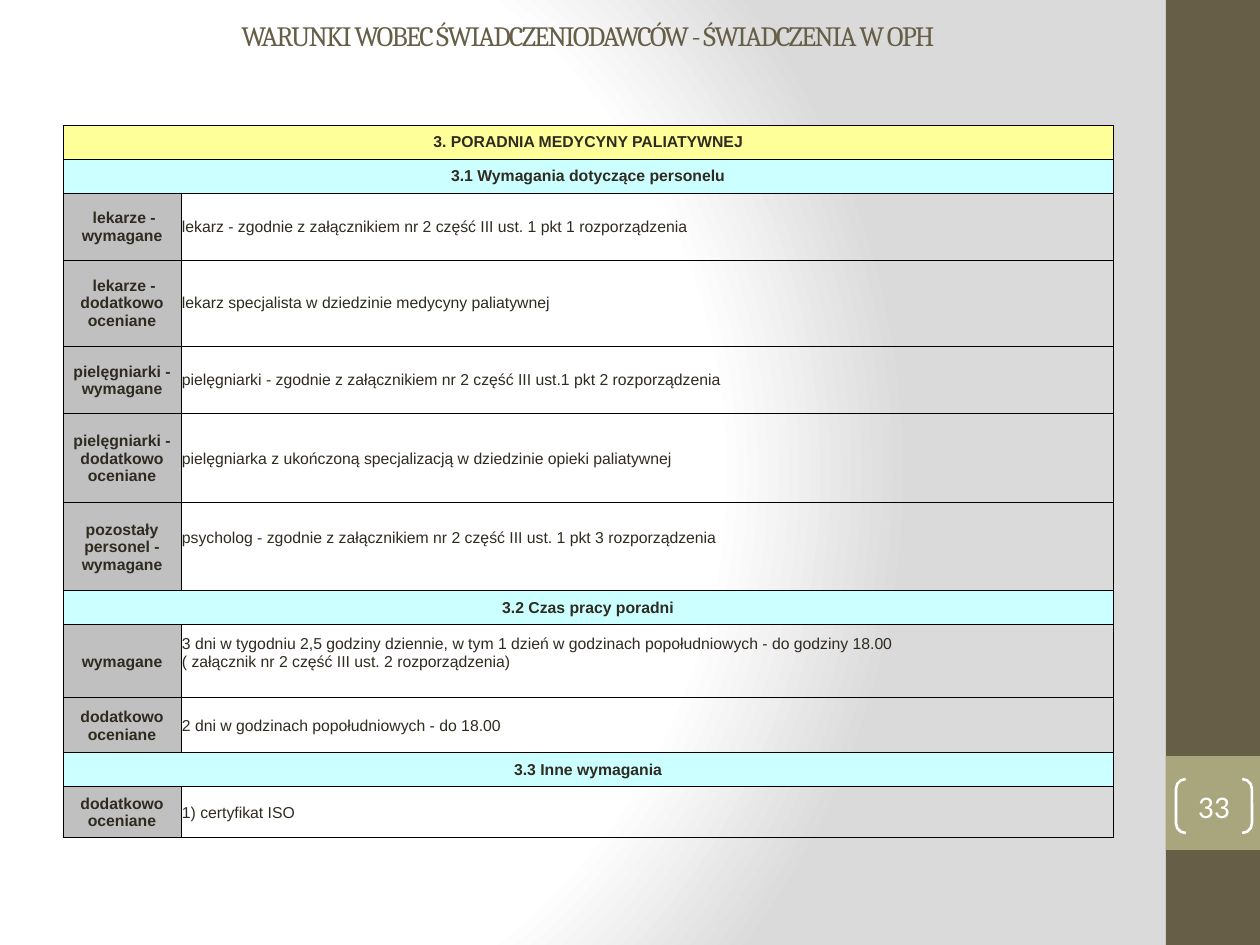
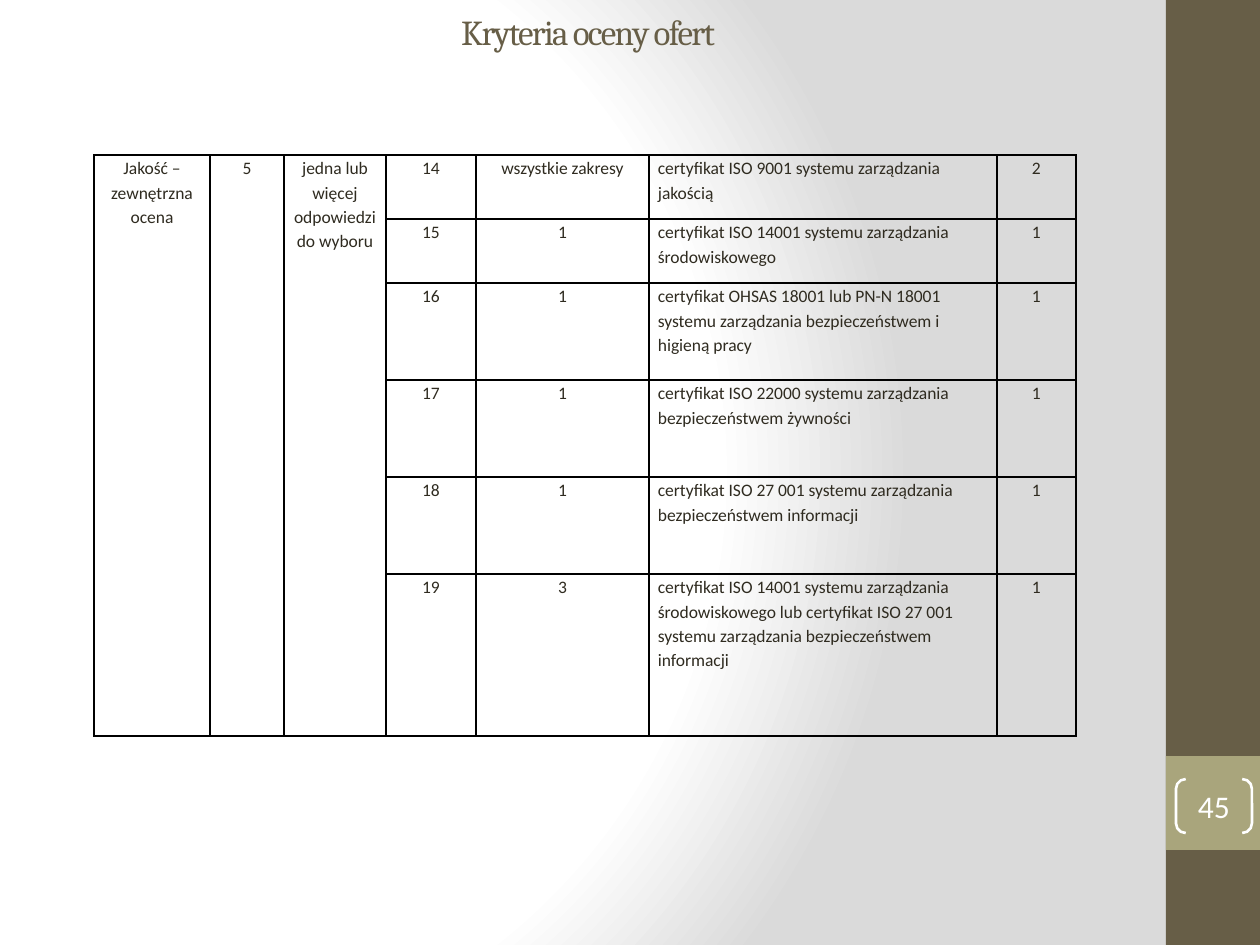
import pptx
import pptx.dml.color
import pptx.enum.shapes
import pptx.enum.text
import pptx.oxml
import pptx.oxml.ns
import pptx.util

PX = 914400 / 126
COLOURS = {
    "olive": "675E47", "sage": "A9A57C", "white": "FFFFFF", "mist": "DADADA",
    "ink": "2F2B20", "black": "000000", "yellow": "FFFF99", "cyan": "CCFFFF",
    "grey": "C0C0C0",
}
SHAPES = pptx.enum.shapes.MSO_SHAPE
CENTER = pptx.enum.text.PP_ALIGN.CENTER
LEFT = pptx.enum.text.PP_ALIGN.LEFT
TOP = pptx.enum.text.MSO_ANCHOR.TOP
MIDDLE = pptx.enum.text.MSO_ANCHOR.MIDDLE
NAMESPACE = pptx.oxml.ns.nsdecls("a")


def emu(pixels):
    return pptx.util.Emu(round(pixels * PX))


def rgb(name):
    return pptx.dml.color.RGBColor.from_string(COLOURS[name])


class Composer:
    """Holds the shared style and the slide being built."""

    def __init__(self):
        self.deck = pptx.Presentation()
        self.deck.slide_width = emu(1260)
        self.deck.slide_height = emu(945)
        self.page = None

    def new_page(self, title, title_size, title_height, number, title_lift=6):
        self.page = self.deck.slides.add_slide(self.deck.slide_layouts[6])
        self.background()
        # Side band with the page number
        self.block(1166, 0, 94, 945, "olive")
        self.block(1166, 756, 94, 94, "sage")
        self.number(number)
        self.title(title, title_size, title_height, title_lift)

    def background(self):
        fill = self.page.background.fill
        fill.solid()
        stops = "".join(
            f'<a:gs pos="{position * 1000}"><a:srgbClr val="{COLOURS[name]}"/></a:gs>'
            for position, name in ((0, "white"), (75, "white"), (100, "mist")))
        gradient = pptx.oxml.parse_xml(
            f'<a:gradFill {NAMESPACE} rotWithShape="1"><a:gsLst>{stops}</a:gsLst>'
            '<a:path path="circle"><a:fillToRect l="20000" t="50000" r="100000" b="50000"/>'
            '</a:path></a:gradFill>')
        solid = self.page.element.find(".//" + pptx.oxml.ns.qn("a:solidFill"))
        solid.getparent().replace(solid, gradient)

    def block(self, left, top, width, height, colour, kind=SHAPES.RECTANGLE):
        shape = self.page.shapes.add_shape(
            kind, emu(left), emu(top), emu(width), emu(height))
        shape.shadow.inherit = False
        shape.line.fill.background()
        if colour:
            shape.fill.solid()
            shape.fill.fore_color.rgb = rgb(colour)
        else:
            shape.fill.background()
        return shape

    def number(self, number):
        bracket = self.block(1176, 779, 76, 54, None, SHAPES.DOUBLE_BRACKET)
        bracket.adjustments[0] = 0.18
        bracket.line.color.rgb = rgb("white")
        bracket.line.width = pptx.util.Pt(1.5)
        frame = bracket.text_frame
        self.margins(frame, 0, 0, 0, 0)
        frame.vertical_anchor = MIDDLE
        self.add_text(frame, str(number), 18, "Calibri", "white")

    def title(self, text, size, height, lift):
        box = self.page.shapes.add_textbox(emu(63), emu(16), emu(1050), emu(height))
        frame = box.text_frame
        frame.word_wrap = True
        frame.vertical_anchor = MIDDLE
        self.margins(frame, 12, 6 if lift == 6 else 0, 12, lift)
        for span in self.add_text(frame, text, size, "Cambria", "olive"):
            span.font._element.set("spc", "-100")

    def margins(self, target, left, top, right, bottom):
        target.margin_left, target.margin_top = emu(left), emu(top)
        target.margin_right, target.margin_bottom = emu(right), emu(bottom)

    def add_text(self, frame, text, size, font, colour, bold=False, align=CENTER, spacing=None):
        para = frame.paragraphs[0]
        para.alignment = align
        if spacing:
            para.line_spacing = spacing
        spans = []
        for index, line in enumerate(text.split("\n")):
            if index:
                para.add_line_break()
            span = para.add_run()
            span.text = line
            span.font.size = pptx.util.Pt(size)
            span.font.name = font
            span.font.bold = bold
            span.font.color.rgb = rgb(colour)
            spans.append(span)
        return spans

    def table(self, left, top, columns, rows, border):
        table = self.page.shapes.add_table(
            len(rows), len(columns), emu(left), emu(top),
            emu(sum(columns)), emu(sum(rows))).table
        table.first_row = table.horz_banding = False
        for column, width in zip(table.columns, columns):
            column.width = emu(width)
        for row, height in zip(table.rows, rows):
            row.height = emu(height)
        for cell in table.iter_cells():
            self.borders(cell, border)
            cell.fill.background()
        return table

    def borders(self, cell, points):
        properties = cell._tc.get_or_add_tcPr()
        for side in "LRTB":
            properties.append(pptx.oxml.parse_xml(
                f'<a:ln{side} {NAMESPACE} w="{round(points * 12700)}"><a:solidFill>'
                f'<a:srgbClr val="{COLOURS["black"]}"/></a:solidFill></a:ln{side}>'))

    def cell(self, cell, text, size, font, margins, anchor, fill=None, **style):
        self.margins(cell, *margins)
        cell.vertical_anchor = anchor
        if fill:
            cell.fill.solid()
            cell.fill.fore_color.rgb = rgb(fill)
        self.add_text(cell.text_frame, text, size, font, "ink", **style)


# Each row: height, heading or label, requirement, space kept below the requirement
CLINIC_ROWS = [
    (34, "3. PORADNIA MEDYCYNY PALIATYWNEJ", None, 0),
    (34, "3.1 Wymagania dotyczące personelu", None, 0),
    (67, " lekarze - wymagane",
     "lekarz - zgodnie z załącznikiem nr 2 część III ust. 1 pkt 1 rozporządzenia", 0),
    (86, " lekarze - dodatkowo oceniane",
     "lekarz specjalista w dziedzinie medycyny paliatywnej", 0),
    (68, "pielęgniarki - wymagane",
     "pielęgniarki - zgodnie z załącznikiem nr 2 część III ust.1 pkt 2 rozporządzenia", 0),
    (89, "pielęgniarki - dodatkowo oceniane",
     "pielęgniarka z ukończoną specjalizacją w dziedzinie opieki paliatywnej", 0),
    (88, "pozostały personel - wymagane",
     "psycholog - zgodnie z załącznikiem nr 2 część III ust. 1 pkt 3 rozporządzenia", 18),
    (34, "3.2 Czas pracy poradni", None, 0),
    (73, "wymagane",
     "3 dni w tygodniu 2,5 godziny dziennie, w tym 1 dzień w godzinach popołudniowych"
     " - do godziny 18.00\n( załącznik nr 2 część III ust. 2 rozporządzenia)", 18),
    (55, "dodatkowo oceniane", "2 dni w godzinach popołudniowych - do 18.00", 0),
    (34, "3.3 Inne wymagania", None, 0),
    (51, "dodatkowo oceniane", "1) certyfikat ISO", 0),
]

QUALITY_GROUP = ("Jakość – zewnętrzna ocena", "5", "jedna lub więcej odpowiedzi do wyboru")

# Each row: height, item number, scope, certificate, points
CERTIFICATE_ROWS = [
    (64, "14", "wszystkie zakresy", "certyfikat ISO 9001 systemu zarządzania jakością", "2"),
    (64, "15", "1", "certyfikat ISO 14001 systemu zarządzania środowiskowego", "1"),
    (97, "16", "1", "certyfikat OHSAS 18001 lub PN-N 18001 systemu zarządzania "
     "bezpieczeństwem i higieną pracy", "1"),
    (97, "17", "1", "certyfikat ISO 22000 systemu zarządzania bezpieczeństwem żywności", "1"),
    (97, "18", "1", "certyfikat ISO 27 001 systemu zarządzania bezpieczeństwem informacji", "1"),
    (162, "19", "3", "certyfikat ISO 14001 systemu zarządzania środowiskowego lub certyfikat "
     "ISO 27 001 systemu zarządzania bezpieczeństwem informacji", "1"),
]


def clinic_page(composer):
    composer.new_page("WARUNKI WOBEC ŚWIADCZENIODAWCÓW - ŚWIADCZENIA W OPH", 16, 39, 33)
    table = composer.table(63, 125, [118, 932], [row[0] for row in CLINIC_ROWS], 0.5)
    for index, (_, label, requirement, space) in enumerate(CLINIC_ROWS):
        first, second = table.cell(index, 0), table.cell(index, 1)
        if requirement is None:
            first.merge(second)
            fill = "cyan" if index else "yellow"
        else:
            fill = "grey"
            composer.cell(second, requirement, 9, "Arial", (1, 1, 1, space), MIDDLE, align=LEFT)
        composer.cell(first, label, 9, "Arial", (1, 1, 1, 0), MIDDLE, fill, bold=True)


def criteria_page(composer):
    composer.new_page("Kryteria oceny ofert", 20, 69, 45, title_lift=39)
    table = composer.table(94, 155, [116, 74, 102, 90, 173, 348, 79],
                           [row[0] for row in CERTIFICATE_ROWS], 1)

    def fill_cell(row, column, text):
        composer.cell(table.cell(row, column), text, 10, "Calibri", (9, 0, 9, 0), TOP,
                      align=LEFT if column == 5 else CENTER, spacing=1.15)

    # Group cells spanning every certificate
    for column, text in enumerate(QUALITY_GROUP):
        table.cell(0, column).merge(table.cell(len(CERTIFICATE_ROWS) - 1, column))
        fill_cell(0, column, text)
    for index, (_, *texts) in enumerate(CERTIFICATE_ROWS):
        for column, text in enumerate(texts, len(QUALITY_GROUP)):
            fill_cell(index, column, text)


def main():
    composer = Composer()
    clinic_page(composer)
    criteria_page(composer)
    composer.deck.save("out.pptx")


if __name__ == "__main__":
    main()
